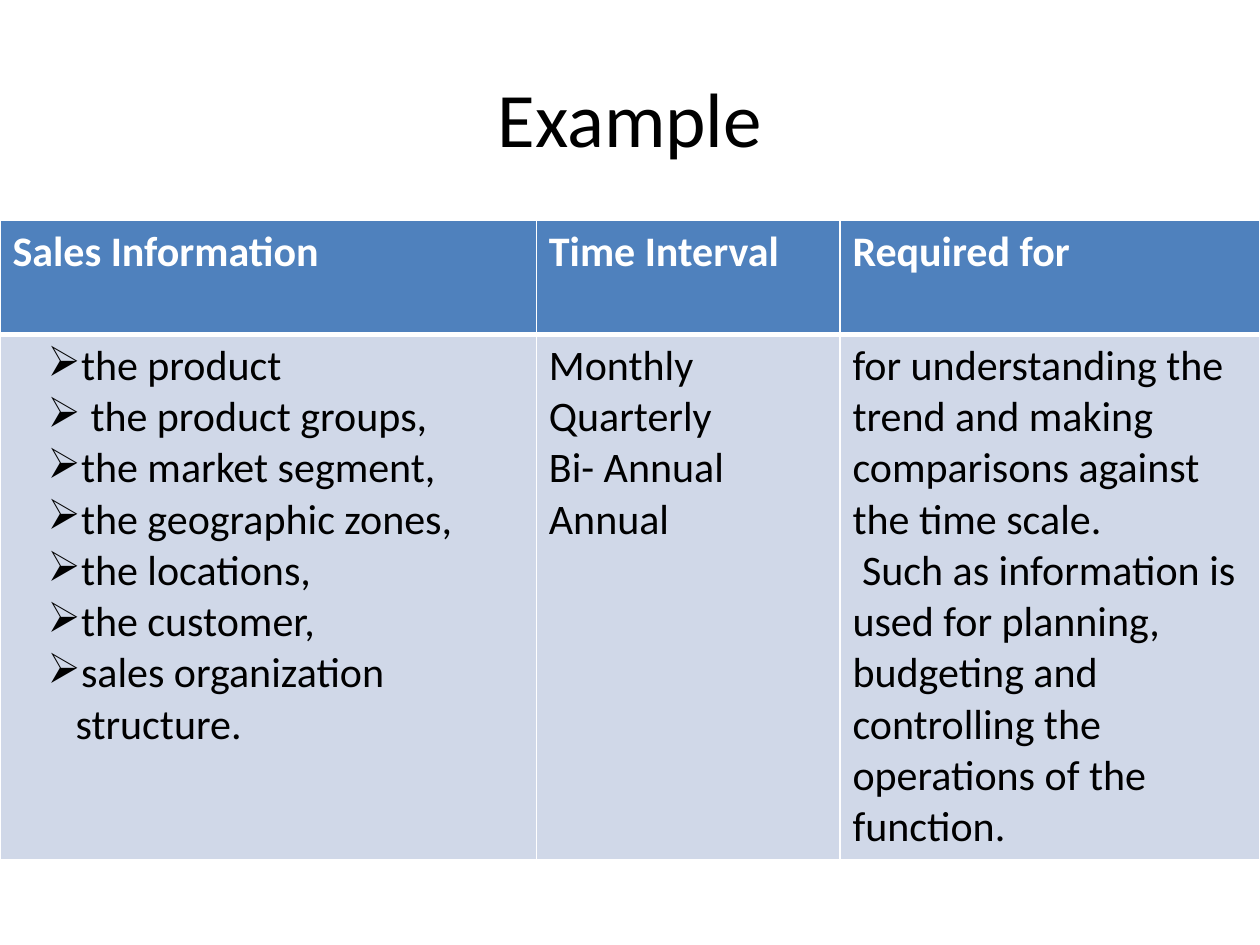
import pptx
import pptx.dml.color
import pptx.enum.text
import pptx.oxml
import pptx.oxml.ns
import pptx.util
from lxml import etree

Pt = pptx.util.Pt
WHITE = pptx.dml.color.RGBColor(0xFF, 0xFF, 0xFF)
BLACK = pptx.dml.color.RGBColor(0, 0, 0)
HEADER_BLUE = pptx.dml.color.RGBColor(0x4F, 0x81, 0xBD)
BODY_BLUE = pptx.dml.color.RGBColor(0xD0, 0xD8, 0xE8)

HEADINGS = ["Sales Information", "Time Interval", "Required for"]
BREAKDOWNS = [
    "the product",
    " the product groups,",
    "the market segment,",
    "the geographic zones,",
    "the locations,",
    "the customer,",
    "sales organization structure.",
]
INTERVALS = ["Monthly", "Quarterly", "Bi- Annual", "Annual"]
PURPOSES = [
    "for understanding the trend and making comparisons against the time scale.",
    " Such as information is used for planning, budgeting and controlling "
    "the operations of the function.",
]


def add_span(para, text, size, color, bold=False):
    span = para.add_run()
    span.text = text
    span.font.name = "Calibri"
    span.font.size = Pt(size)
    span.font.bold = bold
    span.font.color.rgb = color


def set_borders(cell, widths):
    """Draw white borders; widths are in points for left, right, top, bottom."""
    properties = cell._tc.get_or_add_tcPr()
    for place, (side, width) in enumerate(zip("LRTB", widths)):
        line = pptx.oxml.parse_xml(
            f'<a:ln{side} {pptx.oxml.ns.nsdecls("a")} w="{Pt(width)}">'
            f'<a:solidFill><a:srgbClr val="{WHITE}"/></a:solidFill></a:ln{side}>'
        )
        properties.insert(place, line)


deck = pptx.Presentation()
deck.slide_width, deck.slide_height = Pt(720), Pt(540)
page = deck.slides.add_slide(deck.slide_layouts[5])

title = page.shapes.title
title.left, title.top, title.width, title.height = Pt(36), Pt(21.6), Pt(648), Pt(90)
title.text_frame.vertical_anchor = pptx.enum.text.MSO_ANCHOR.MIDDLE
title_para = title.text_frame.paragraphs[0]
title_para.alignment = pptx.enum.text.PP_ALIGN.CENTER
add_span(title_para, "Example", 44, BLACK)

table = page.shapes.add_table(2, 3, Pt(0), Pt(126), Pt(720), Pt(365)).table
for column, width in zip(table.columns, [306.5, 173.5, 240]):
    column.width = Pt(width)
for row, height in zip(table.rows, [65, 300]):
    row.height = Pt(height)

rows = [[[heading] for heading in HEADINGS], [BREAKDOWNS, INTERVALS, PURPOSES]]
styles = [(HEADER_BLUE, WHITE, True, (1, 1, 1, 3)), (BODY_BLUE, BLACK, False, (1, 1, 3, 1))]
for row, contents, (fill, color, bold, borders) in zip(table.rows, rows, styles):
    for cell, lines in zip(row.cells, contents):
        cell.fill.solid()
        cell.fill.fore_color.rgb = fill
        set_borders(cell, borders)
        for number, text in enumerate(lines):
            frame = cell.text_frame
            para = frame.add_paragraph() if number else frame.paragraphs[0]
            add_span(para, text, 24, color, bold)

for para in table.cell(1, 0).text_frame.paragraphs:
    para.level = 1
    properties = para._p.get_or_add_pPr()
    properties.set("marL", str(Pt(36)))
    properties.set("indent", str(Pt(-16)))
    bullet = etree.SubElement(properties, pptx.oxml.ns.qn("a:buChar"))
    bullet.set("char", "➢")

deck.save("out.pptx")
